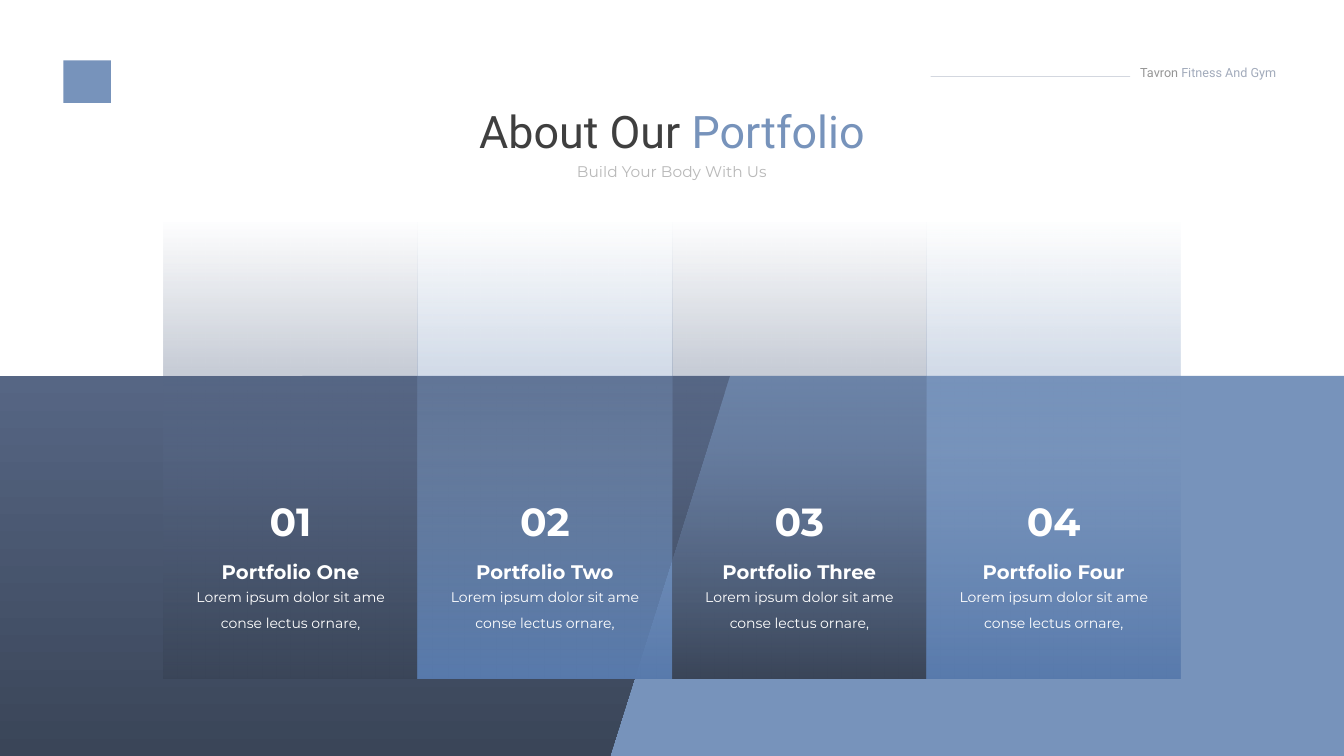
"""Build the portfolio slide: four fading columns over a slanted two-tone band."""
from lxml import etree
from pptx import Presentation
from pptx import util as u
from pptx.dml.color import RGBColor
from pptx.enum import shapes, text
from pptx.oxml.ns import qn

COLORS = {"slate": "566684", "night": "3A4558", "sky": "7793BB", "blue": "587AAC",
          "ink": "3F3F3F", "gray": "7F7F7F", "white": "FFFFFF"}
WIDTH, HEIGHT = 13.33, 7.5
BAND_TOP = 3.73
COLUMN_LEFT, COLUMN_TOP, COLUMN_WIDTH, COLUMN_HEIGHT = 1.62, 2.2, 2.523, 4.53

PORTFOLIOS = ["One", "Two", "Three", "Four"]
SUMMARY = "Lorem ipsum dolor sit ame conse lectus ornare,"
FADES = [
    [(0, "slate", 0), (50, "slate", 50), (100, "night", 100)],
    [(0, "sky", 0), (50, "sky", 50), (100, "blue", 100)],
]
SLATE_BAND = [(0, "slate", 100), (100, "night", 100)]
HEADINGS = [
    ((11.21, 0.59, 1.58, 0.25), [("Tavron ", "ink"), ("Fitness And Gym", "slate")],
     dict(size=9, font="Roboto", opacity=55, align="LEFT", wrap=False)),
    ((3.7, 0.98, 5.93, 0.64), [("About Our ", "ink"), ("Portfolio", "sky")],
     dict(size=32, font="Roboto")),
    ((5.61, 1.56, 2.11, 0.29), [("Build Your Body With Us", "gray")],
     dict(size=11, opacity=55, wrap=False)),
]
CARD_LINES = [
    (5.39, 2.09, 0.41, "Portfolio {name}", dict(size=14, bold=True, spacing=1.5)),
    (5.71, 2.09, 0.58, SUMMARY, dict(size=10, spacing=1.5)),
    (4.88, 0.81, 0.57, "{number:02d}", dict(size=28, bold=True)),
]


def set_opacity(element, percent):
    for color in element.iter(qn("a:srgbClr")):
        etree.SubElement(color, qn("a:alpha"), val=str(percent * 1000))


def paint(shape, fill):
    shape.shadow.inherit = False
    shape.line.fill.background()
    if isinstance(fill, str):
        shape.fill.solid()
        shape.fill.fore_color.rgb = RGBColor.from_string(COLORS[fill])
        return
    shape.fill.gradient()
    shape.fill.gradient_angle = 270
    stops = next(shape._element.iter(qn("a:gsLst")))
    for stop in list(stops):
        stops.remove(stop)
    for position, name, opacity in fill:
        stop = etree.SubElement(stops, qn("a:gs"), pos=str(position * 1000))
        etree.SubElement(stop, qn("a:srgbClr"), val=COLORS[name])
        if opacity < 100:
            set_opacity(stop, opacity)


def add_rectangle(page, box, fill):
    paint(page.shapes.add_shape(shapes.MSO_SHAPE.RECTANGLE, *map(u.Inches, box)), fill)


def add_text(page, box, spans, size, font="Montserrat", bold=False, opacity=100,
             align="CENTER", spacing=None, wrap=True):
    frame = page.shapes.add_textbox(*map(u.Inches, box)).text_frame
    frame.word_wrap = wrap
    frame.auto_size = text.MSO_AUTO_SIZE.SHAPE_TO_FIT_TEXT
    para = frame.paragraphs[0]
    para.alignment = text.PP_ALIGN[align]
    para.line_spacing = spacing
    for words, color in spans:
        span = para.add_run()
        span.text = words
        span.font.size, span.font.name, span.font.bold = u.Pt(size), font, bold
        span.font.color.rgb = RGBColor.from_string(COLORS[color])
        if opacity < 100:
            set_opacity(span._r, opacity)


def add_band(page):
    add_rectangle(page, (3, BAND_TOP, WIDTH - 3, HEIGHT - BAND_TOP), "sky")
    corners = [(0, BAND_TOP), (7.24, BAND_TOP), (6.05, HEIGHT), (0, HEIGHT)]
    points = [(u.Inches(x), u.Inches(y)) for x, y in corners]
    outline = page.shapes.build_freeform(*points[0])
    outline.add_line_segments(points[1:], close=True)
    paint(outline.convert_to_shape(), SLATE_BAND)


def add_rule(page):
    ends = map(u.Inches, (9.23, 0.76, 11.21, 0.76))
    rule = page.shapes.add_connector(shapes.MSO_CONNECTOR.STRAIGHT, *ends)
    rule.line.width = u.Pt(0.5)
    rule.line.color.rgb = RGBColor.from_string(COLORS["slate"])
    properties = rule._element.spPr
    set_opacity(properties, 25)
    etree.SubElement(properties, qn("a:effectLst"))


def main():
    deck = Presentation()
    deck.slide_width, deck.slide_height = u.Inches(WIDTH), u.Inches(HEIGHT)
    page = deck.slides.add_slide(deck.slide_layouts[6])
    add_band(page)
    lefts = [COLUMN_LEFT + i * COLUMN_WIDTH for i in range(len(PORTFOLIOS))]
    for i, left in enumerate(lefts):
        add_rectangle(page, (left, COLUMN_TOP, COLUMN_WIDTH, COLUMN_HEIGHT), FADES[i % 2])
    add_rectangle(page, (0.63, 0.6, 0.47, 0.42), "sky")
    add_rule(page)
    for box, spans, style in HEADINGS:
        add_text(page, box, spans, **style)
    for number, (left, name) in enumerate(zip(lefts, PORTFOLIOS), 1):
        for top, width, height, words, style in CARD_LINES:
            box = (left + (COLUMN_WIDTH - width) / 2, top, width, height)
            add_text(page, box, [(words.format(name=name, number=number), "white")], **style)
    deck.save("out.pptx")


if __name__ == "__main__":
    main()
